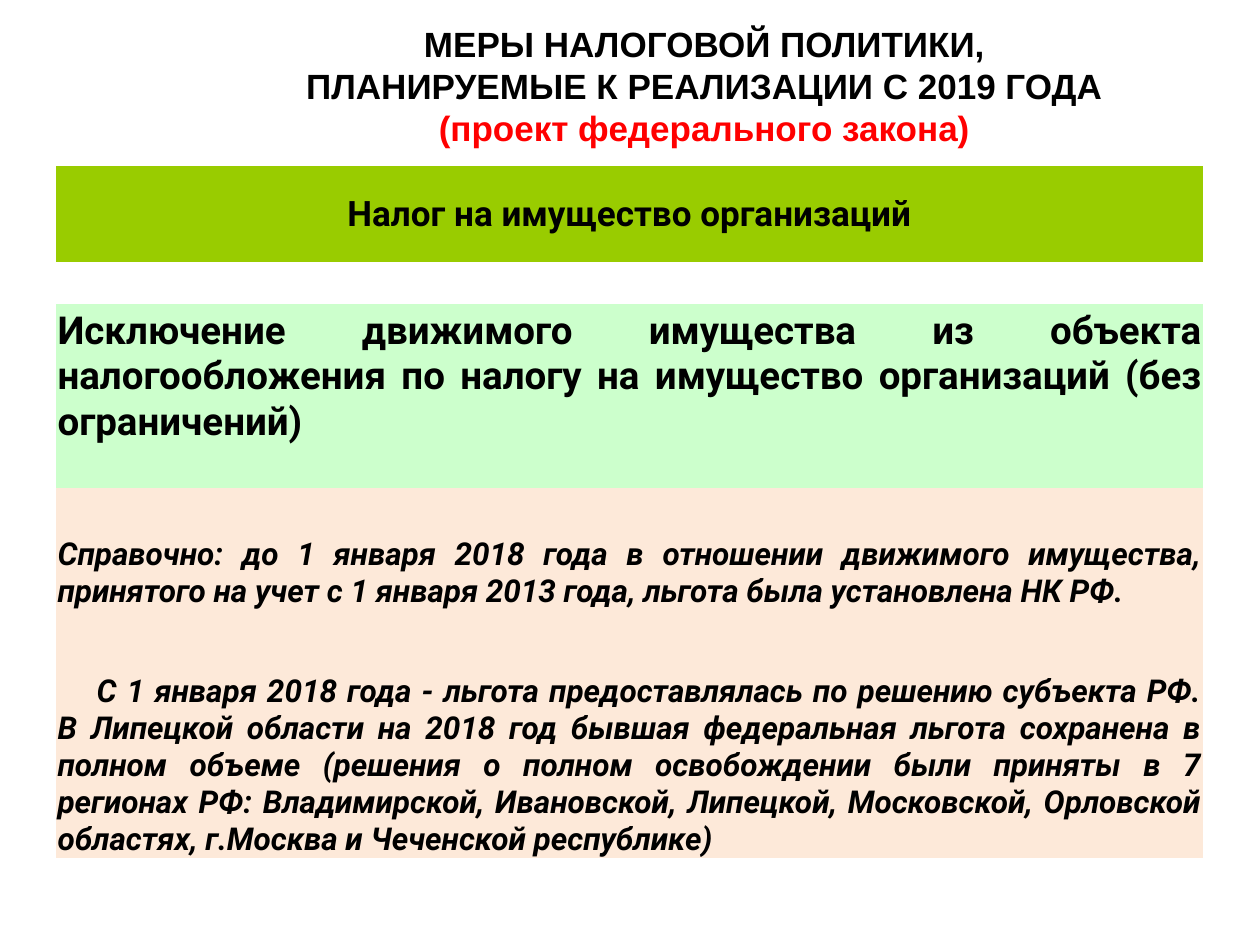
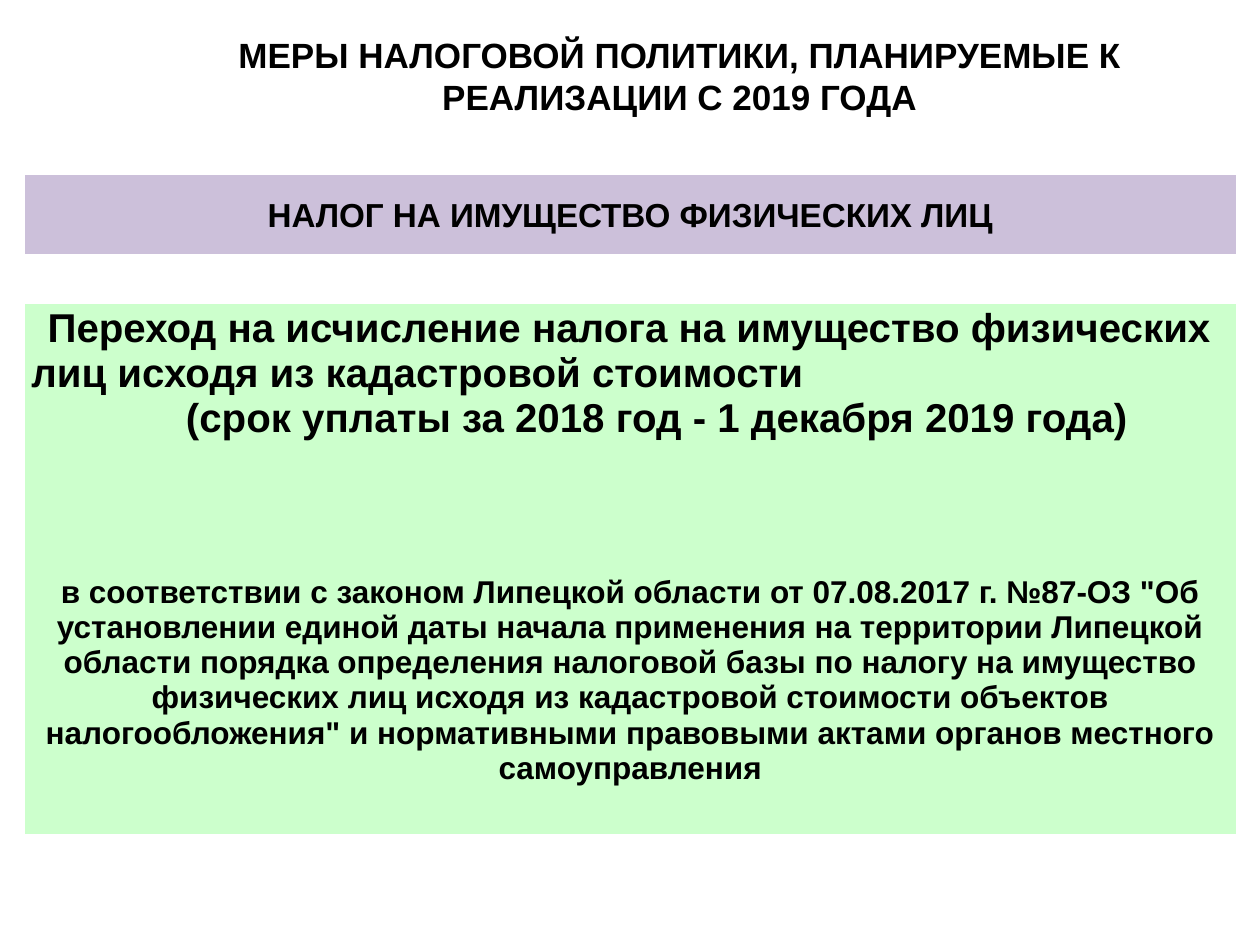
from pptx import Presentation
from pptx.dml.color import RGBColor as RGB
from pptx.enum.text import MSO_ANCHOR as ANCHOR, PP_ALIGN as ALIGN
from pptx.util import Cm, Pt

COLORS = {
    "text": "000000",
    "accent": "FF0000",
    "lime": "99CC00",
    "mint": "CCFFCC",
    "peach": "FDE9D9",
    "lilac": "CCC0DA",
}
NO_GRID_STYLE = "{2D5ABB26-0587-4C30-8999-92F81FD0307C}"


def rgb(name):
    return RGB.from_string(COLORS[name])


def format_paragraph(p, font, size, align, color="text", italic=False):
    p.alignment = align
    for r in p.runs:
        r.font.name = font
        r.font.size = Pt(size)
        r.font.bold = True
        r.font.italic = italic
        r.font.color.rgb = rgb(color)


def add_title(s, left, width, height, lines):
    """Centred heading; lines holds (text, colour) pairs."""
    tf = s.shapes.add_textbox(Cm(left), Cm(0.33), Cm(width), Cm(height)).text_frame
    tf.word_wrap = True
    tf.vertical_anchor = ANCHOR.MIDDLE
    for i, (text, color) in enumerate(lines):
        p = tf.add_paragraph() if i else tf.paragraphs[0]
        p.text = text
        format_paragraph(p, "Arial", 20, ALIGN.CENTER, color)


def add_band_table(s, left, top, col_widths, row_heights):
    """Plain table without grid, fills or wide cell margins."""
    table = s.shapes.add_table(len(row_heights), len(col_widths), Cm(left), Cm(top),
                               Cm(sum(col_widths)), Cm(sum(row_heights))).table
    table.first_row = table.horz_banding = False
    table._tbl.tblPr[0].text = NO_GRID_STYLE
    for column, width in zip(table.columns, col_widths):
        column.width = Cm(width)
    for row, height in zip(table.rows, row_heights):
        row.height = Cm(height)
    for cell in table.iter_cells():
        cell.fill.background()
        cell.margin_left = cell.margin_right = cell.margin_top = Cm(0.03)
        cell.margin_bottom = 0
    return table


def fill_row(table, row, color):
    for cell in table.rows[row].cells:
        cell.fill.solid()
        cell.fill.fore_color.rgb = rgb(color)


def merge_row(table, row):
    cell = table.cell(row, 0)
    cell.merge(table.cell(row, len(table.columns) - 1))
    return cell


def add_band(table, row, color, texts, font, size, align=ALIGN.CENTER,
             anchor=ANCHOR.MIDDLE, italic=False):
    """Merge and fill a row, write its paragraphs and return them."""
    fill_row(table, row, color)
    cell = merge_row(table, row)
    cell.vertical_anchor = anchor
    cell.text_frame.text = "\n".join(texts)
    for p in cell.text_frame.paragraphs:
        format_paragraph(p, font, size, align, italic=italic)
    return cell.text_frame.paragraphs


def set_indent(p, left=0.0, first=0.0):
    pPr = p._p.get_or_add_pPr()
    pPr.set("marL", str(Cm(left)))
    pPr.set("indent", str(Cm(first)))


def build_organizations(prs):
    s = prs.slides.add_slide(prs.slide_layouts[6])
    add_title(s, 3.5, 21.4, 2.8, [
        ("МЕРЫ НАЛОГОВОЙ ПОЛИТИКИ,", "text"),
        ("ПЛАНИРУЕМЫЕ К РЕАЛИЗАЦИИ С 2019 ГОДА", "text"),
        ("(проект федерального закона)", "accent"),
    ])
    table = add_band_table(s, 1.13, 3.35, [11.35, 0.5, 11.27],
                           [1.93, 0.84, 2.92, 0.77, 2.46, 5.0])
    add_band(table, 0, "lime", ["Налог на имущество организаций"], "Roboto", 20)
    merge_row(table, 1)
    add_band(table, 2, "mint", [
        "Исключение движимого имущества из объекта налогообложения по налогу "
        "на имущество организаций (без ограничений)"],
        "Roboto", 22, ALIGN.JUSTIFY)
    fill_row(table, 3, "mint")

    # Reference notes
    notes = [
        "Справочно: до 1 января 2018 года в отношении движимого имущества, "
        "принятого на учет с 1 января 2013 года, льгота была установлена НК РФ.",
        "С 1 января 2018 года - льгота предоставлялась по решению субъекта РФ. "
        "В Липецкой области на 2018 год бывшая федеральная льгота сохранена в "
        "полном объеме (решения о полном освобождении были приняты в 7 регионах РФ: "
        "Владимирской, Ивановской, Липецкой, Московской, Орловской областях, "
        "г.Москва и Чеченской республике)",
    ]
    for row, (note, first) in enumerate(zip(notes, (0, 0.79)), start=4):
        p, = add_band(table, row, "peach", [note], "Roboto", 18, ALIGN.JUSTIFY,
                      ANCHOR.BOTTOM, italic=True)
        set_indent(p, first=first)


def build_individuals(prs):
    s = prs.slides.add_slide(prs.slide_layouts[6])
    add_title(s, 2.5, 22.4, 2.4, [
        ("МЕРЫ НАЛОГОВОЙ ПОЛИТИКИ, ПЛАНИРУЕМЫЕ К РЕАЛИЗАЦИИ С 2019 ГОДА", "text"),
    ])
    table = add_band_table(s, 0.5, 3.53, [15.95, 8.46], [1.6, 1.0, 4.15, 1.27, 5.26])
    add_band(table, 0, "lilac", ["НАЛОГ НА ИМУЩЕСТВО ФИЗИЧЕСКИХ ЛИЦ"], "Arial", 19)
    merge_row(table, 1)
    transition, deadline = add_band(table, 2, "mint", [
        "Переход на исчисление налога на имущество физических лиц "
        "исходя из кадастровой стоимости",
        "(срок уплаты за 2018 год - 1 декабря 2019 года)"],
        "Arial", 23, anchor=ANCHOR.TOP)
    transition.alignment = ALIGN.LEFT
    set_indent(transition, left=0.1, first=0.33)
    set_indent(deadline, left=1.1)
    fill_row(table, 3, "mint")

    # Legal basis
    add_band(table, 4, "mint", [
        "в соответствии с законом Липецкой области от 07.08.2017 г. №87-ОЗ "
        "\"Об установлении единой даты начала применения на территории Липецкой "
        "области порядка определения налоговой базы по налогу на имущество "
        "физических лиц исходя из кадастровой стоимости объектов налогообложения\" "
        "и нормативными правовыми актами органов местного самоуправления"],
        "Arial", 18, anchor=ANCHOR.TOP)


def main():
    prs = Presentation()
    prs.slide_width, prs.slide_height = Cm(25.4), Cm(19.05)
    build_organizations(prs)
    build_individuals(prs)
    prs.save("out.pptx")


if __name__ == "__main__":
    main()
